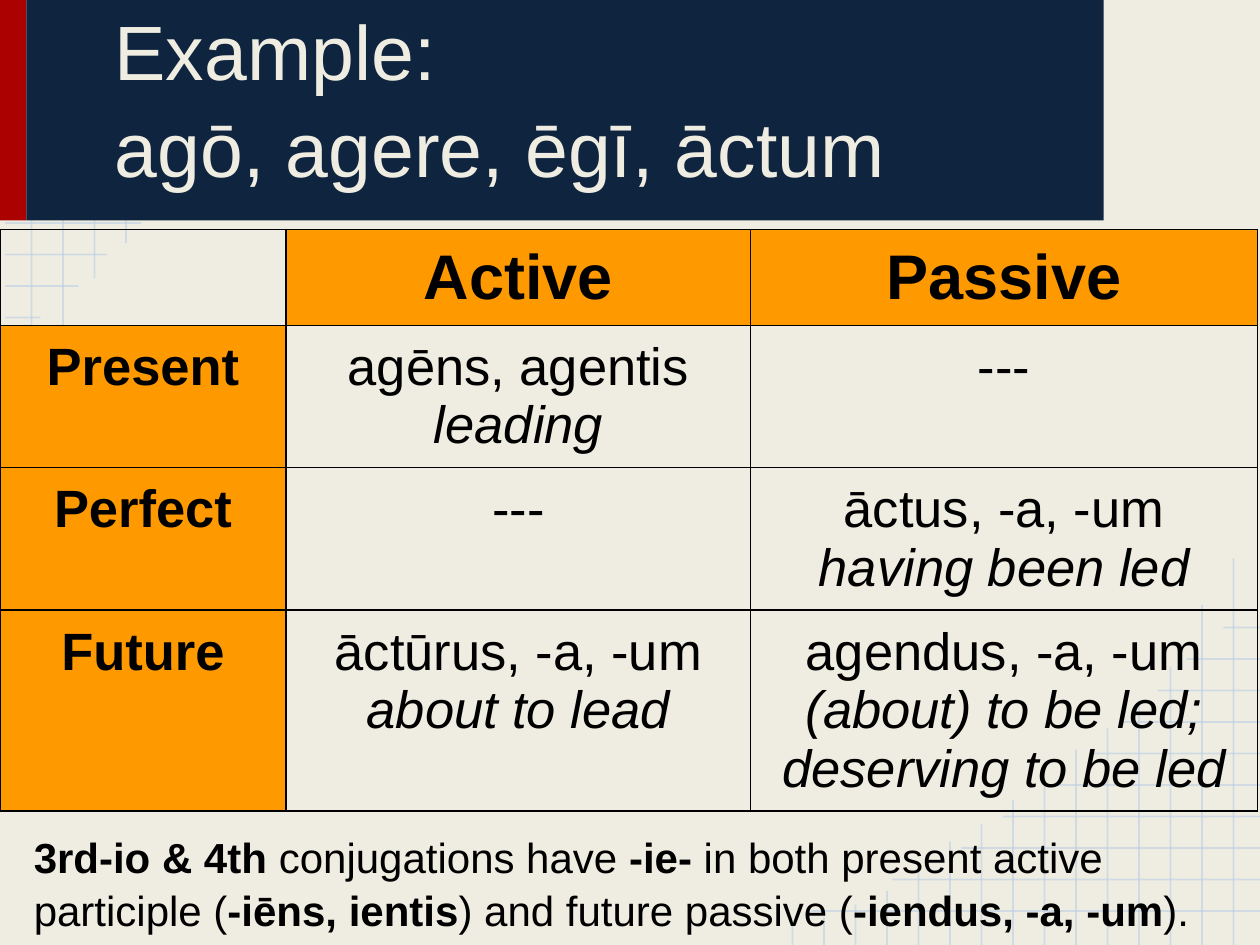
from collections import namedtuple

from lxml import etree
from pptx import Presentation
from pptx import util as u
from pptx.dml.color import RGBColor
from pptx.enum import shapes, text
from pptx.oxml import ns

CREAM = RGBColor(0xEF, 0xED, 0xE2)
NAVY = RGBColor(0x0F, 0x24, 0x3E)
RED = RGBColor(0xAB, 0x01, 0x01)
ORANGE = RGBColor(0xFF, 0x99, 0x00)
PALE_BLUE = RGBColor(0xB7, 0xCC, 0xE4)
BLACK = RGBColor(0, 0, 0)
FONT = "Arial"
GRID_STEP = 0.25

Box = namedtuple("Box", "left top width height")

HEADINGS = ["", "Active", "Passive"]
TENSES = [
    ("Present", ["agēns, agentis", "leading"], ["---"]),
    ("Perfect", ["---"], ["āctus, -a, -um", "having been led"]),
    ("Future", ["āctūrus, -a, -um", "about to lead"],
     ["agendus, -a, -um", "(about) to be led; deserving to be led"]),
]
NOTE = [
    ("3rd-io & 4th ", True), ("conjugations have ", False), ("-ie-", True),
    (" in both present active participle (", False), ("-iēns, ientis", True),
    (") and future passive (", False), ("-iendus, -a, -um", True), (").", False),
]


def inches(*lengths):
    return [u.Inches(length) for length in lengths]


def add_span(para, words, size, color=BLACK, bold=False, italic=False):
    span = para.add_run()
    span.text = words
    font = span.font
    font.name, font.size, font.bold, font.italic = FONT, u.Pt(size), bold, italic
    font.color.rgb = color


def set_margins(holder):
    holder.margin_left = holder.margin_right = u.Inches(0.1)
    holder.margin_top = holder.margin_bottom = u.Inches(0.1)


def add_grid_line(page, start, end):
    line = page.shapes.add_connector(
        shapes.MSO_CONNECTOR.STRAIGHT, *inches(*start, *end))
    line.line.color.rgb = PALE_BLUE
    line.line.width = u.Pt(1)
    properties = line.element.spPr
    color = properties.find(".//" + ns.qn("a:srgbClr"))
    etree.SubElement(color, ns.qn("a:alpha"), val="54000")
    etree.SubElement(properties, ns.qn("a:effectLst"))


def add_upper_grid(page, box):
    for index, width in enumerate([1.08, 0.81, 0.58, 0.28]):
        y = box.top + 1.77 + index * GRID_STEP
        add_grid_line(page, (box.left + 0.04, y), (box.left + 0.04 + width, y))
    for index, height in enumerate([3.07, 2.7, 2.21, 1.93], 1):
        x = box.left + index * GRID_STEP
        add_grid_line(page, (x, box.top + height), (x, box.top))


def add_lower_grid(page, box):
    right, bottom = box.left + box.width, box.top + box.height
    widths = [3.56, 2.92, 2.37, 2.04, 1.63, 1.33, 1.08, 0.81, 0.58, 0.29]
    heights = [3.07, 2.7, 2.21, 1.93, 1.72, 1.55, 1.31, 1.15,
               0.96, 0.82, 0.64, 0.43, 0.32, 0.22, 0.18]
    for index, width in enumerate(widths):
        y = bottom - 0.27 - index * GRID_STEP
        add_grid_line(page, (right, y), (right - width, y))
    for index, height in enumerate(heights):
        x = right - 0.21 - index * GRID_STEP
        add_grid_line(page, (x, bottom - height), (x, bottom))


def add_header(page, box):
    stripe = 0.21
    for offset, width, color in [(0, stripe, RED), (stripe, box.width - stripe, NAVY)]:
        bar = page.shapes.add_shape(
            shapes.MSO_SHAPE.RECTANGLE,
            *inches(box.left + offset, box.top, width, box.height))
        bar.shadow.inherit = False
        bar.fill.solid()
        bar.fill.fore_color.rgb = color
        bar.line.fill.background()

    title = page.shapes.title
    title.element.getparent().append(title.element)
    title.left, title.top, title.width, title.height = inches(
        box.left + 0.5, box.top + 0.16, 8, 1.48)
    frame = title.text_frame
    set_margins(frame)
    frame.word_wrap = True
    frame.auto_size = text.MSO_AUTO_SIZE.NONE
    frame.vertical_anchor = text.MSO_ANCHOR.BOTTOM
    for index, words in enumerate(["Example:", "agō, agere, ēgī, āctum"]):
        para = frame.add_paragraph() if index else frame.paragraphs[0]
        para.alignment = text.PP_ALIGN.LEFT
        para.line_spacing = 1.05
        properties = para._p.get_or_add_pPr()
        properties.set("marL", "0")
        properties.set("indent", str(u.Inches(0.31)))
        add_span(para, words, 44, CREAM)


def add_borders(cell):
    properties = cell._tc.get_or_add_tcPr()
    for index, side in enumerate(["lnL", "lnR", "lnT", "lnB"]):
        border = etree.Element(ns.qn("a:" + side), w=str(u.Pt(0.75)))
        fill = etree.SubElement(border, ns.qn("a:solidFill"))
        etree.SubElement(fill, ns.qn("a:srgbClr"), val=str(BLACK))
        properties.insert(index, border)


def fill_cell(cell, lines, size, heading):
    set_margins(cell)
    if heading:
        cell.fill.solid()
        cell.fill.fore_color.rgb = ORANGE
    else:
        cell.fill.background()
    add_borders(cell)
    for index, words in enumerate(lines):
        para = cell.text_frame.add_paragraph() if index else cell.text_frame.paragraphs[0]
        para.alignment = text.PP_ALIGN.CENTER
        add_span(para, words, size, bold=heading, italic=index > 0)


def add_participles(page, box):
    frame = page.shapes.add_table(len(TENSES) + 1, len(HEADINGS), *inches(*box))
    table = frame.table
    table.first_row = table.horz_banding = False
    for column, width in zip(table.columns, [2.27, 3.69, 4.02]):
        column.width = u.Inches(width)
    for row, height in zip(table.rows, [0.73, 1.08, 1.07, 1.19]):
        row.height = u.Inches(height)
    for column, words in enumerate(HEADINGS):
        fill_cell(table.cell(0, column), [words] if words else [], 36, bool(words))
    for row, (tense, active, passive) in enumerate(TENSES, 1):
        for column, lines in enumerate([[tense], active, passive]):
            fill_cell(table.cell(row, column), lines, 30, column == 0)


def add_note(page, box):
    frame = page.shapes.add_textbox(*inches(*box)).text_frame
    set_margins(frame)
    frame.word_wrap = True
    para = frame.paragraphs[0]
    para.line_spacing = 1.05
    for words, bold in NOTE:
        add_span(para, words, 24, bold=bold)


def main():
    deck = Presentation()
    deck.slide_width, deck.slide_height = inches(10, 7.5)
    page = deck.slides.add_slide(deck.slide_layouts[5])
    page.background.fill.solid()
    page.background.fill.fore_color.rgb = CREAM
    whole = Box(0, 0, 10, 7.5)
    add_upper_grid(page, whole)
    add_lower_grid(page, whole)
    add_header(page, Box(0, -0.01, 8.76, 1.76))
    add_participles(page, Box(0, 1.82, 9.97, 4.9))
    add_note(page, Box(0.17, 6.48, 9.64, 1.06))
    deck.save("out.pptx")


if __name__ == "__main__":
    main()
